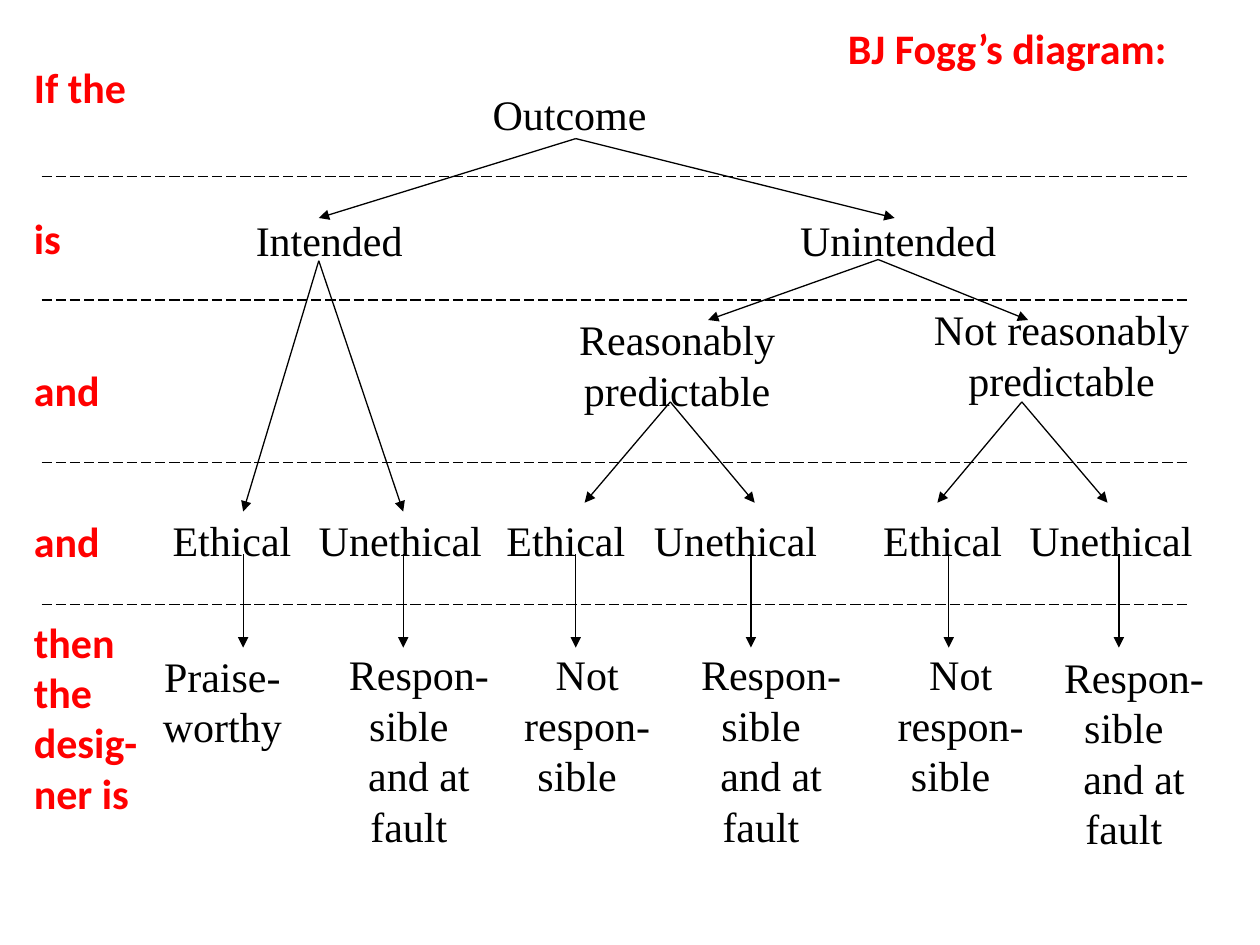
from lxml import etree
from pptx import Presentation
from pptx import util as u
from pptx.dml.color import RGBColor
from pptx.enum import dml, shapes, text
from pptx.oxml import ns

COLORS = {"ink": "000000", "accent": "FF0000"}
SERIF, SANS = "Times New Roman", "Calibri"
INDENT = 0.16

# Tree coordinates are inches from the top left of the tree's box
OUTCOMES = [  # left, top, width, lines, first-line indent
    (2.86, 0.18, 1.44, ["Outcome"], 0),
    (0.82, 1.18, 1.52, ["Intended"], INDENT),
    (5.14, 1.18, 1.85, ["Unintended"], INDENT),
    (3.31, 1.97, 1.97, ["Reasonably", "predictable"], INDENT),
    (5.97, 1.89, 2.75, ["Not reasonably", "predictable"], INDENT),
]
BRANCHES = [  # start, ends in x, end in y
    ((3.57, 0.6), (1.53, 6.1), 1.23),
    ((1.53, 1.57), (0.93, 2.2), 3.56),
    ((5.97, 1.56), (4.62, 7.16), 2.04),
    ((4.32, 2.69), (3.64, 4.99), 3.49),
    ((7.11, 2.69), (6.44, 7.79), 3.49),
]
AT_FAULT = ["Respon-sible", "and at fault"]
NOT_RESPONSIBLE = ["Not", "respon-sible"]
LEAVES = [  # motive left, width; arrow x; verdict left, top, width, lines
    (0.16, 1.36, 0.93, 0, 4.64, 1.37, ["Praise-", "worthy"]),
    (1.32, 1.6, 2.2, 1.38, 4.63, 1.73, AT_FAULT),
    (2.81, 1.33, 3.57, 2.84, 4.63, 1.48, NOT_RESPONSIBLE),
    (3.98, 1.78, 4.96, 4.32, 4.63, 1.44, AT_FAULT),
    (5.8, 1.34, 6.53, 5.63, 4.63, 1.83, NOT_RESPONSIBLE),
    (6.96, 1.75, 7.88, 7.14, 4.65, 1.56, AT_FAULT),
]


def style(paragraph, font_name, color, bold=False):
    font = paragraph.font
    font.name, font.size, font.bold = font_name, u.Pt(24), bold
    font.color.rgb = RGBColor.from_string(COLORS[color])


def add_line(slide, start, end, dashed=False, arrow=False):
    line = slide.shapes.add_connector(
        shapes.MSO_CONNECTOR.STRAIGHT, *map(u.Inches, (*start, *end)))
    line.line.width = u.Pt(0.75)
    line.line.color.rgb = RGBColor.from_string(COLORS["ink"])
    if dashed:
        line.line.dash_style = dml.MSO_LINE.LONG_DASH
    properties = line._element.spPr
    if arrow:
        etree.SubElement(properties.find(ns.qn("a:ln")),
                         ns.qn("a:tailEnd"), type="triangle")
    etree.SubElement(properties, ns.qn("a:effectLst"))


def add_node(slide, left, top, width, lines, indent=INDENT):
    height = 0.05 + 0.4 * len(lines)
    node = slide.shapes.add_textbox(*map(u.Inches, (left, top, width, height)))
    frame = node.text_frame
    frame.word_wrap = True
    frame.margin_left = frame.margin_right = u.Inches(0.05)
    frame.margin_top = frame.margin_bottom = u.Inches(0.02)
    frame.text = "\n".join(lines)
    for paragraph in frame.paragraphs:
        style(paragraph, SERIF, "ink")
        paragraph.alignment = (text.PP_ALIGN.CENTER if len(lines) > 1
                               else text.PP_ALIGN.JUSTIFY)
        properties = paragraph._p.get_or_add_pPr()
        properties.set("marL", "0")
        properties.set("indent", str(u.Inches(indent)))


def place_title(slide, box):
    title = slide.shapes.title
    title.left, title.top, title.width, title.height = map(u.Inches, box)
    frame = title.text_frame
    frame.text = "BJ Fogg’s diagram:"
    frame.word_wrap = False
    frame.auto_size = text.MSO_AUTO_SIZE.NONE
    frame.vertical_anchor = text.MSO_ANCHOR.TOP
    heading = frame.paragraphs[0]
    heading.alignment = text.PP_ALIGN.LEFT
    style(heading, SANS, "accent", bold=True)


def place_questions(slide, box):
    line_height = 28.8
    questions = [("If the", 0), ("is", 2), ("and", 2), ("and", 2),
                 ("then the desig- ner is", 1)]
    frame = slide.shapes.add_textbox(*map(u.Inches, box)).text_frame
    frame.word_wrap = True
    frame.text = "\n".join(words for words, _ in questions)
    for paragraph, (_, lines_above) in zip(frame.paragraphs, questions):
        style(paragraph, SANS, "accent", bold=True)
        paragraph.space_before = u.Pt(lines_above * line_height)


def place_dividers(slide, box):
    left, top, width, height = box
    for offset in (0, 0.98, 2.27, height):
        y = top + offset
        add_line(slide, (left, y), (left + width, y), dashed=True)


def place_tree(slide, box):
    left, top = box[:2]

    def arrow(start, end):
        add_line(slide, (left + start[0], top + start[1]),
                 (left + end[0], top + end[1]), arrow=True)

    # Outcomes and the arrows that branch from them
    for x, y, width, lines, indent in OUTCOMES:
        add_node(slide, left + x, top + y, width, lines, indent)
    for start, ends, end_y in BRANCHES:
        for end_x in ends:
            arrow(start, (end_x, end_y))

    # Motives, each leading to its verdict
    for i, (x, width, arrow_x, verdict_x, verdict_y, verdict_width,
            verdict) in enumerate(LEAVES):
        motive = ("Ethical", "Unethical")[i % 2]
        add_node(slide, left + x, top + 3.56, width, [motive])
        add_node(slide, left + verdict_x, top + verdict_y, verdict_width, verdict)
        arrow((arrow_x, 3.9), (arrow_x, 4.64))


def main():
    deck = Presentation()
    deck.slide_width, deck.slide_height = u.Inches(10), u.Inches(7.5)
    slide = deck.slides.add_slide(deck.slide_layouts.get_by_name("Title Only"))
    place_dividers(slide, (0.33, 1.4, 9.12, 3.4))
    place_tree(slide, (1, 0.5, 8.72, 6.1))
    place_questions(slide, (0.17, 0.44, 1.21, 6.16))
    place_title(slide, (6.63, 0.13, 2.76, 0.5))
    deck.save("out.pptx")


if __name__ == "__main__":
    main()
